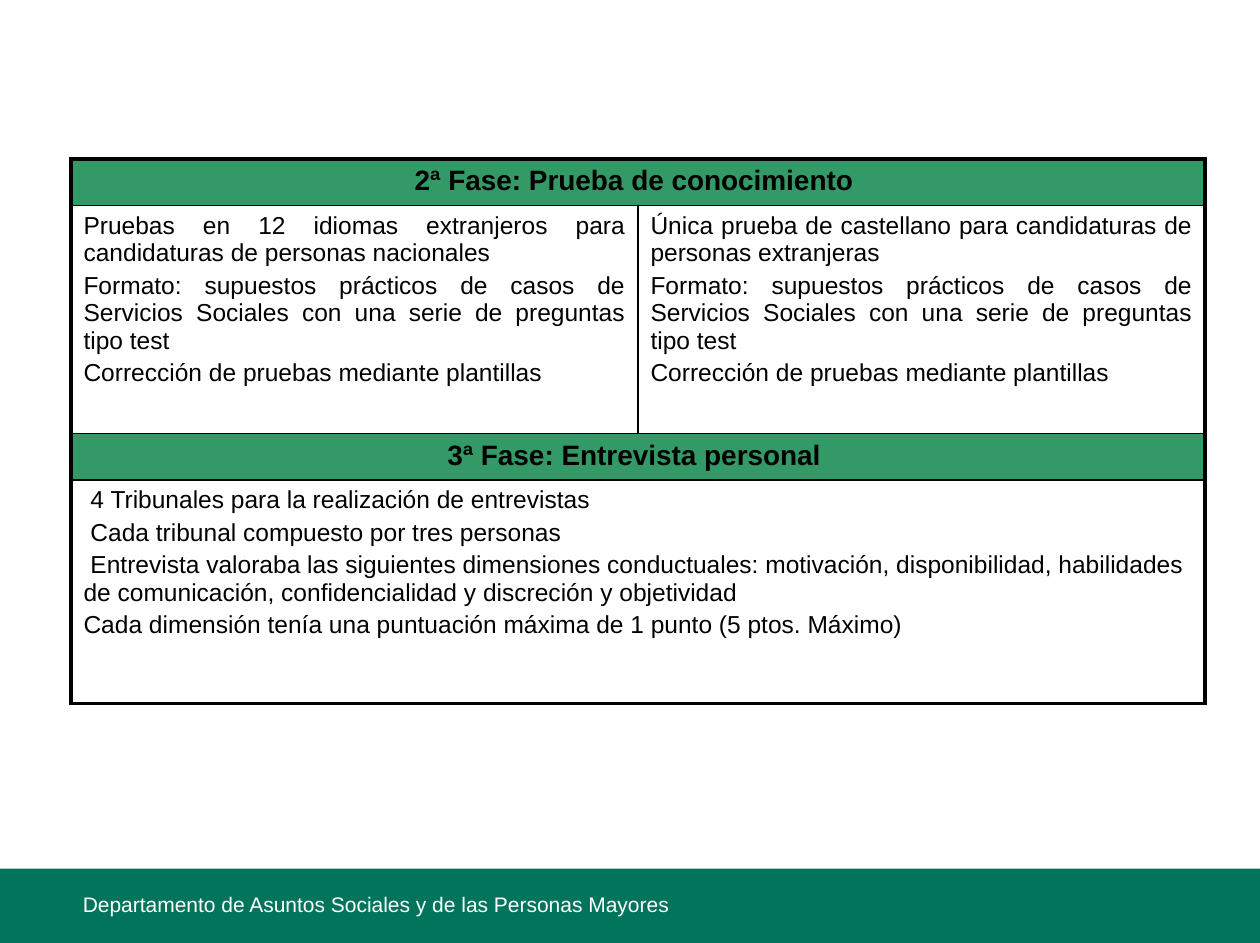
from dataclasses import dataclass

from lxml.etree import SubElement
from pptx import Presentation
from pptx.dml.color import RGBColor
from pptx.enum.shapes import MSO_SHAPE as Shape
from pptx.enum.text import PP_ALIGN as Align
from pptx.oxml.ns import qn
from pptx.table import Table, _Cell as Cell
from pptx.text.text import TextFrame
from pptx.util import Cm, Length, Pt

BLACK = RGBColor(0x00, 0x00, 0x00)
WHITE = RGBColor(0xFF, 0xFF, 0xFF)
HEADING_GREEN = RGBColor(0x33, 0x99, 0x66)
FOOTER_GREEN = RGBColor(0x00, 0x75, 0x5C)
FONT = "Arial"
THICK, THIN = Pt(2.25), Pt(1)
SLIDE_WIDTH, SLIDE_HEIGHT = Cm(25.4), Cm(19)
LINE_INDENT = Cm(0.14)


@dataclass
class Row:
    height: Length
    cells: list[list[str]]
    align: Align
    heading: bool = False
    indented: int = 0  # number of leading paragraphs with a first-line indent


SHARED_FORMAT = [
    "Formato: supuestos prácticos de casos de Servicios Sociales con una serie "
    "de preguntas tipo test",
    "Corrección de pruebas mediante plantillas",
]
ROWS = [
    Row(Cm(0.94), [["2ª Fase: Prueba de conocimiento "]], Align.CENTER, heading=True),
    Row(Cm(4.6), [
        ["Pruebas en 12 idiomas extranjeros para candidaturas de personas nacionales",
         *SHARED_FORMAT],
        ["Única prueba de castellano para candidaturas de personas extranjeras",
         *SHARED_FORMAT],
    ], Align.JUSTIFY),
    Row(Cm(0.91), [["3ª Fase: Entrevista personal "]], Align.CENTER, heading=True),
    Row(Cm(4.5), [[
        "4 Tribunales para la realización de entrevistas",
        "Cada tribunal compuesto por tres personas",
        "Entrevista valoraba las siguientes dimensiones conductuales: motivación, "
        "disponibilidad, habilidades de comunicación, confidencialidad y discreción "
        "y objetividad",
        "Cada dimensión tenía una puntuación máxima de 1 punto (5 ptos. Máximo)",
    ]], Align.LEFT, indented=3),
]


def write_paragraphs(frame: TextFrame, lines: list[str], size: int, color: RGBColor,
                     align: Align, bold: bool = False, indented: int = 0) -> None:
    for index, line in enumerate(lines):
        paragraph = frame.paragraphs[0] if index == 0 else frame.add_paragraph()
        paragraph.text = line
        paragraph.alignment = align
        if index > 0:
            paragraph.space_before = Pt(size * 0.2)
        if index < indented:
            properties = paragraph._p.get_or_add_pPr()
            properties.set("marL", "0")
            properties.set("indent", str(LINE_INDENT))
        font = paragraph.runs[0].font
        font.name, font.size, font.bold = FONT, Pt(size), bold
        font.color.rgb = color


def set_borders(cell: Cell, left: Length, right: Length, top: Length,
                bottom: Length) -> None:
    properties = cell._tc.get_or_add_tcPr()
    for side, width in zip("LRTB", (left, right, top, bottom)):
        line = SubElement(properties, qn(f"a:ln{side}"), w=str(width))
        fill = SubElement(line, qn("a:solidFill"))
        SubElement(fill, qn("a:srgbClr"), val=str(BLACK))


def fill_row(table: Table, index: int, row: Row) -> None:
    table.rows[index].height = row.height
    merged = len(row.cells) == 1
    last_row = len(ROWS) - 1
    for column in range(2):
        cell = table.cell(index, column)
        set_borders(cell,
                    left=THICK if column == 0 else THIN,
                    right=THICK if column == 1 or merged else THIN,
                    top=THICK if index == 0 else THIN,
                    bottom=THICK if index == last_row else THIN)
        if row.heading:
            cell.fill.solid()
            cell.fill.fore_color.rgb = HEADING_GREEN
        else:
            cell.fill.background()
    if merged:
        table.cell(index, 0).merge(table.cell(index, 1))
    for column, lines in enumerate(row.cells):
        write_paragraphs(table.cell(index, column).text_frame, lines,
                         16 if row.heading else 14, BLACK, row.align,
                         row.heading, row.indented)


def main() -> None:
    deck = Presentation()
    deck.slide_width, deck.slide_height = SLIDE_WIDTH, SLIDE_HEIGHT
    slide = deck.slides.add_slide(deck.slide_layouts[6])

    # Footer band and department name
    band_top = Cm(17.5)
    band = slide.shapes.add_shape(Shape.RECTANGLE, 0, band_top, SLIDE_WIDTH,
                                  SLIDE_HEIGHT - band_top)
    band.shadow.inherit = False
    band.fill.solid()
    band.fill.fore_color.rgb = FOOTER_GREEN
    band.line.fill.background()

    department = slide.shapes.add_textbox(Cm(1.67), Cm(17.96), Cm(18.54), Cm(0.6)).text_frame
    department.word_wrap = True
    department.margin_left = department.margin_right = 0
    department.margin_top = department.margin_bottom = 0
    write_paragraphs(department,
                     ["Departamento de Asuntos Sociales y de las Personas Mayores"],
                     12, WHITE, Align.LEFT)

    # Selection phases
    phases = slide.shapes.add_table(len(ROWS), 2, Cm(1.43), Cm(3.2), Cm(22.86),
                                    sum(row.height for row in ROWS)).table
    for index, row in enumerate(ROWS):
        fill_row(phases, index, row)

    deck.save("out.pptx")


if __name__ == "__main__":
    main()
